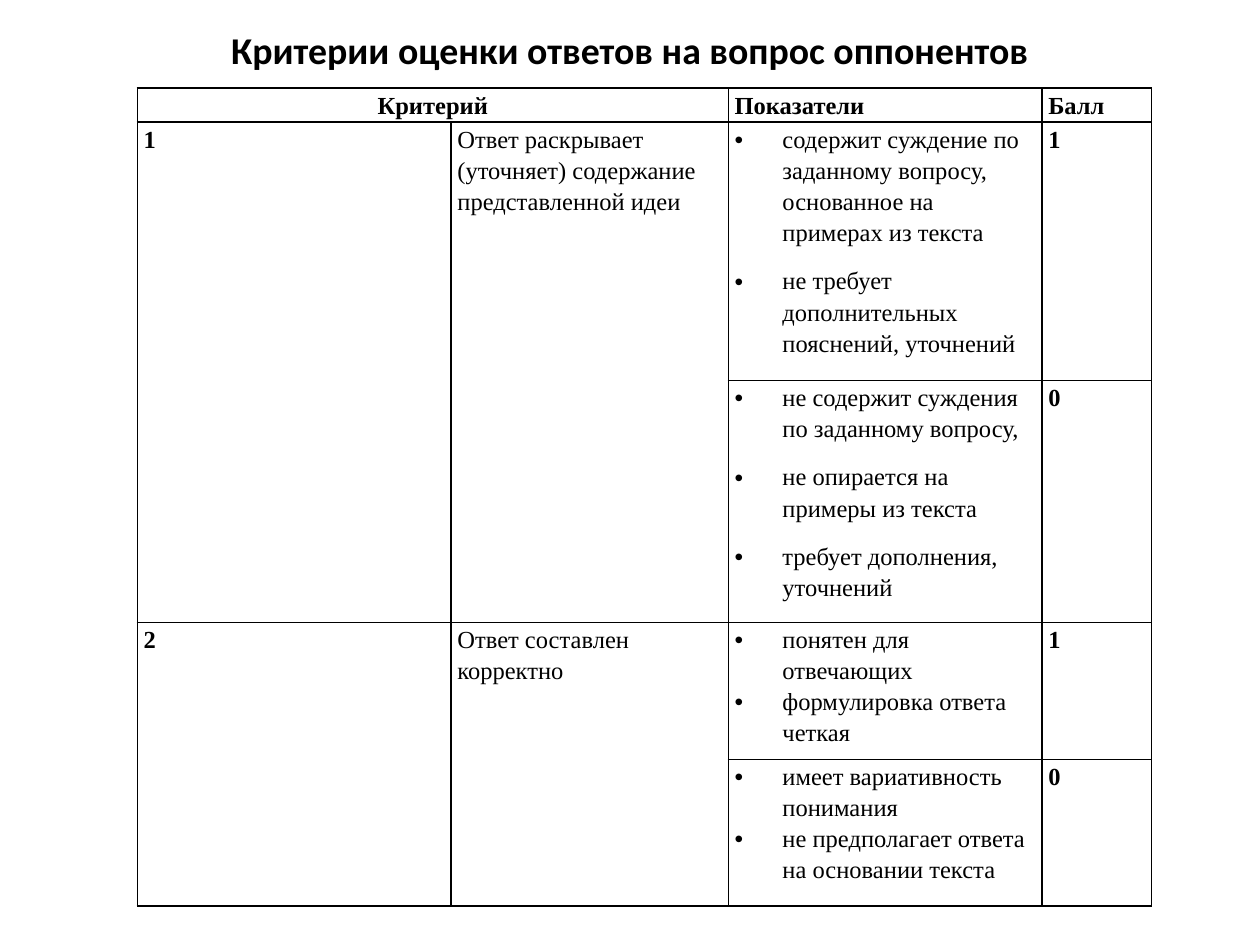
import lxml.etree
import pptx
import pptx.dml.color
import pptx.enum.text
import pptx.oxml.ns
import pptx.util

Inches = pptx.util.Inches
Pt = pptx.util.Pt
Align = pptx.enum.text.PP_ALIGN
HUES = {"ink": "000000", "page": "FFFFFF"}
COLS = [2.49, 2.2, 2.49, 0.87]
ROWS = [0.27, 2.05, 1.92, 1.09, 1.16]
SPANS = [(0, 0, 0, 1), (1, 0, 2, 0), (1, 1, 2, 1), (3, 0, 4, 0), (3, 1, 4, 1)]
BOLD = {
    (0, 0): "Критерий",
    (0, 2): "Показатели",
    (0, 3): "Балл",
    (1, 0): "1",
    (1, 3): "1",
    (2, 3): "0",
    (3, 0): "2",
    (3, 3): "1",
    (4, 3): "0",
}
PLAIN = {
    (1, 1): "Ответ раскрывает (уточняет) содержание представленной идеи",
    (3, 1): "Ответ составлен корректно",
}
LISTS = {
    1: [
        ("содержит суждение по заданному вопросу, основанное на примерах из текста", 10),
        ("не требует дополнительных пояснений, уточнений", 10),
    ],
    2: [
        ("не содержит суждения по заданному вопросу,", 10),
        ("не опирается на примеры из текста", 10),
        ("требует дополнения, уточнений", 0),
    ],
    3: [("понятен для отвечающих", 0), ("формулировка ответа четкая", 0)],
    4: [("имеет вариативность понимания", 0), ("не предполагает ответа на основании текста", 0)],
}


class Deck:
    """Holds the style and the current slide."""

    def __init__(self):
        self.file = pptx.Presentation()
        self.file.slide_width = Inches(10)
        self.file.slide_height = Inches(7.5)
        self.slide = self.file.slides.add_slide(self.file.slide_layouts[6])
        self.slide.background.fill.solid()
        self.slide.background.fill.fore_color.rgb = self.hue("page")

    def hue(self, name):
        return pptx.dml.color.RGBColor.from_string(HUES[name])

    def node(self, parent, tag, **attrs):
        return lxml.etree.SubElement(parent, pptx.oxml.ns.qn(tag), **attrs)

    def style(self, para, face, size, bold):
        font = para.font
        font.name, font.size, font.bold = face, Pt(size), bold
        font.color.rgb = self.hue("ink")

    def title(self, text, left, top, width, height):
        box = self.slide.shapes.add_textbox(
            Inches(left), Inches(top), Inches(width), Inches(height))
        frame = box.text_frame
        frame.word_wrap = True
        para = frame.paragraphs[0]
        para.text = text
        para.alignment = Align.CENTER
        self.style(para, "Calibri", 21.6, True)

    def table(self, left, top, cols, rows):
        frame = self.slide.shapes.add_table(
            len(rows), len(cols), Inches(left), Inches(top),
            Inches(sum(cols)), Inches(sum(rows)))
        grid = frame.table
        grid.first_row = grid.horz_banding = False
        for col, width in zip(grid.columns, cols):
            col.width = Inches(width)
        for row, height in zip(grid.rows, rows):
            row.height = Inches(height)
        for cell in grid.iter_cells():
            self.border(cell)
        return grid

    def border(self, cell):
        cell.margin_left = cell.margin_right = Inches(0.05)
        cell.margin_top = cell.margin_bottom = 0
        props = cell._tc.get_or_add_tcPr()
        for side in "LRTB":
            line = self.node(props, f"a:ln{side}", w=str(Pt(1)))
            fill = self.node(line, "a:solidFill")
            self.node(fill, "a:srgbClr", val=HUES["ink"])
        cell.fill.background()

    def label(self, cell, items, bold=False, bullet=False):
        frame = cell.text_frame
        for i, (text, after) in enumerate(items):
            para = frame.add_paragraph() if i else frame.paragraphs[0]
            para.text = text
            para.line_spacing = 1.15
            para.space_after = Pt(after)
            if bullet:
                props = para._p.get_or_add_pPr()
                props.set("marL", str(Inches(0.38)))
                props.set("indent", str(-Inches(0.38)))
                self.node(props, "a:buFont", typeface="Arial")
                self.node(props, "a:buChar", char="•")
            self.style(para, "Times New Roman", 14, bold)


def main():
    deck = Deck()
    deck.title("Критерии оценки ответов на вопрос оппонентов", 0.5, 0.16, 9, 0.78)
    grid = deck.table(1.09, 0.7, COLS, ROWS)
    for top, left, end, right in SPANS:
        grid.cell(top, left).merge(grid.cell(end, right))
    for texts, bold in ((BOLD, True), (PLAIN, False)):
        for spot, text in texts.items():
            deck.label(grid.cell(*spot), [(text, 0)], bold)
    for row, items in LISTS.items():
        deck.label(grid.cell(row, 2), items, bullet=True)
    grid.cell(0, 0).text_frame.paragraphs[0].alignment = Align.CENTER
    deck.file.save("out.pptx")


if __name__ == "__main__":
    main()
